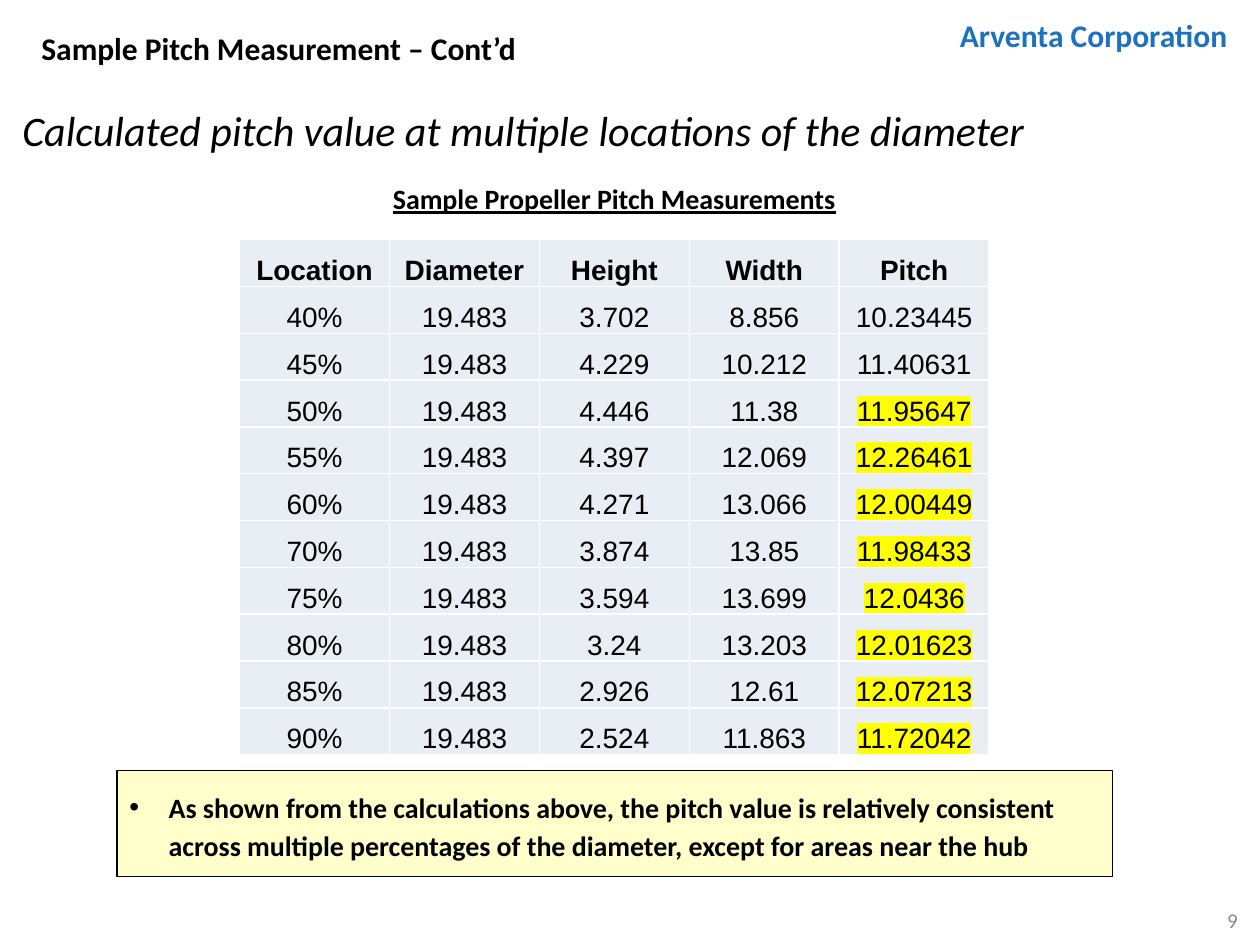
from lxml.etree import SubElement
from pptx import Presentation
from pptx.dml.color import RGBColor
from pptx.enum.shapes import MSO_SHAPE
from pptx.enum.text import MSO_ANCHOR, PP_ALIGN
from pptx.oxml import parse_xml
from pptx.oxml.ns import nsdecls, qn
from pptx.util import Cm, Pt

BLACK = RGBColor(0x00, 0x00, 0x00)
WHITE = RGBColor(0xFF, 0xFF, 0xFF)
BLUE = RGBColor(0x1C, 0x71, 0xC1)
GRAY = RGBColor(0x89, 0x89, 0x89)
CELL = RGBColor(0xE9, 0xED, 0xF4)
CREAM = RGBColor(0xFF, 0xFF, 0xCC)
YELLOW = RGBColor(0xFF, 0xFF, 0x00)

BASE = dict(name="Calibri", bold=False, color=BLACK)
HEADING = dict(BASE, size=Pt(18), bold=True)
BRAND = dict(HEADING, color=BLUE)
SUBTITLE = dict(BASE, size=Pt(24), italic=True)
NOTE = dict(BASE, size=Pt(16), bold=True)
CAPTION = dict(NOTE, underline=True)
NUMBER = dict(BASE, size=Pt(12), color=GRAY)
BODY = dict(BASE, name="Arial", size=Pt(16))
HEADER = dict(BODY, bold=True)

COLUMNS = ["Location", "Diameter", "Height", "Width", "Pitch"]
DIAMETER = "19.483"
MEASUREMENTS = [
    ("40%", "3.702", "8.856", "10.23445"),
    ("45%", "4.229", "10.212", "11.40631"),
    ("50%", "4.446", "11.38", "11.95647"),
    ("55%", "4.397", "12.069", "12.26461"),
    ("60%", "4.271", "13.066", "12.00449"),
    ("70%", "3.874", "13.85", "11.98433"),
    ("75%", "3.594", "13.699", "12.0436"),
    ("80%", "3.24", "13.203", "12.01623"),
    ("85%", "2.926", "12.61", "12.07213"),
    ("90%", "2.524", "11.863", "11.72042"),
]
FIRST_CONSISTENT_ROW = 3


def write(tf, text, style, align=PP_ALIGN.LEFT, spacing=None):
    p = tf.paragraphs[0]
    p.alignment = align
    p.line_spacing = spacing
    r = p.add_run()
    r.text = text
    for key, value in style.items():
        if key == "color":
            r.font.color.rgb = value
        else:
            setattr(r.font, key, value)
    return p, r


def add_text(s, box, text, style, wrap=True, anchor=MSO_ANCHOR.TOP, **layout):
    tf = s.shapes.add_textbox(*map(Cm, box)).text_frame
    tf.word_wrap = wrap
    tf.vertical_anchor = anchor
    write(tf, text, style, **layout)


def add_title(s, box, text):
    sp = s.shapes.title
    sp.left, sp.top, sp.width, sp.height = map(Cm, box)
    sp.text_frame.vertical_anchor = MSO_ANCHOR.TOP
    write(sp.text_frame, text, HEADING)


def set_borders(cell, color):
    tc_pr = cell._tc.get_or_add_tcPr()
    for i, side in enumerate(("lnL", "lnR", "lnT", "lnB")):
        tc_pr.insert(i, parse_xml(
            f'<a:{side} {nsdecls("a")} w="{Pt(1)}"><a:solidFill>'
            f'<a:srgbClr val="{color}"/></a:solidFill></a:{side}>'))


def highlight(r, color):
    mark = parse_xml(
        f'<a:highlight {nsdecls("a")}><a:srgbClr val="{color}"/></a:highlight>')
    r.font._element.find(qn("a:solidFill")).addnext(mark)


def add_measurements(s, box):
    left, top, width, height = map(Cm, box)
    rows = [COLUMNS] + [(loc, DIAMETER, *rest) for loc, *rest in MEASUREMENTS]
    table = s.shapes.add_table(
        len(rows), len(COLUMNS), left, top, width, height).table
    insets = dict(margin_left=Cm(0.05), margin_right=Cm(0.05),
                  margin_top=Cm(0.05), margin_bottom=0,
                  vertical_anchor=MSO_ANCHOR.BOTTOM)
    for i, row in enumerate(rows):
        for j, text in enumerate(row):
            cell = table.cell(i, j)
            for key, value in insets.items():
                setattr(cell, key, value)
            cell.fill.solid()
            cell.fill.fore_color.rgb = CELL
            set_borders(cell, WHITE)
            _, r = write(cell.text_frame, text, BODY if i else HEADER,
                         PP_ALIGN.CENTER)
            if i >= FIRST_CONSISTENT_ROW and j == len(COLUMNS) - 1:
                highlight(r, YELLOW)


def add_conclusion(s, box, text):
    sp = s.shapes.add_shape(MSO_SHAPE.RECTANGLE, *map(Cm, box))
    sp.shadow.inherit = False
    sp.fill.solid()
    sp.fill.fore_color.rgb = CREAM
    sp.line.color.rgb = BLACK
    sp.line.width = Pt(0.75)
    tf = sp.text_frame
    tf.word_wrap = True
    tf.vertical_anchor = MSO_ANCHOR.MIDDLE
    p, _ = write(tf, text, NOTE, spacing=1.15)
    p_pr = p._p.get_or_add_pPr()
    p_pr.set("marL", str(Cm(0.79)))
    p_pr.set("indent", str(-Cm(0.79)))
    SubElement(p_pr, qn("a:buFont"), typeface="Arial")
    SubElement(p_pr, qn("a:buChar"), char="•")


def main():
    prs = Presentation()
    prs.slide_width, prs.slide_height = Cm(25.4), Cm(19.05)
    s = prs.slides.add_slide(prs.slide_layouts[5])
    add_text(s, (19.1, 0.2, 5.94, 1.02), "Arventa Corporation", BRAND, wrap=False)
    add_text(s, (19.28, 18.03, 5.92, 1.02), "9", NUMBER,
             anchor=MSO_ANCHOR.MIDDLE, align=PP_ALIGN.RIGHT)
    add_title(s, (0.58, 0.46, 14.6, 1.02), "Sample Pitch Measurement – Cont’d")
    add_conclusion(
        s, (2.36, 15.54, 20.07, 2.13),
        "As shown from the calculations above, the pitch value is relatively "
        "consistent across multiple percentages of the diameter, except for "
        "areas near the hub")
    add_measurements(s, (4.83, 4.83, 15.11, 10.39))
    add_text(s, (0.2, 1.83, 25.58, 1.37),
             "Calculated pitch value at multiple locations of the diameter",
             SUBTITLE, spacing=1.15)
    add_text(s, (7.67, 3.53, 10.06, 0.94),
             "Sample Propeller Pitch Measurements", CAPTION)
    prs.save("out.pptx")


if __name__ == "__main__":
    main()
